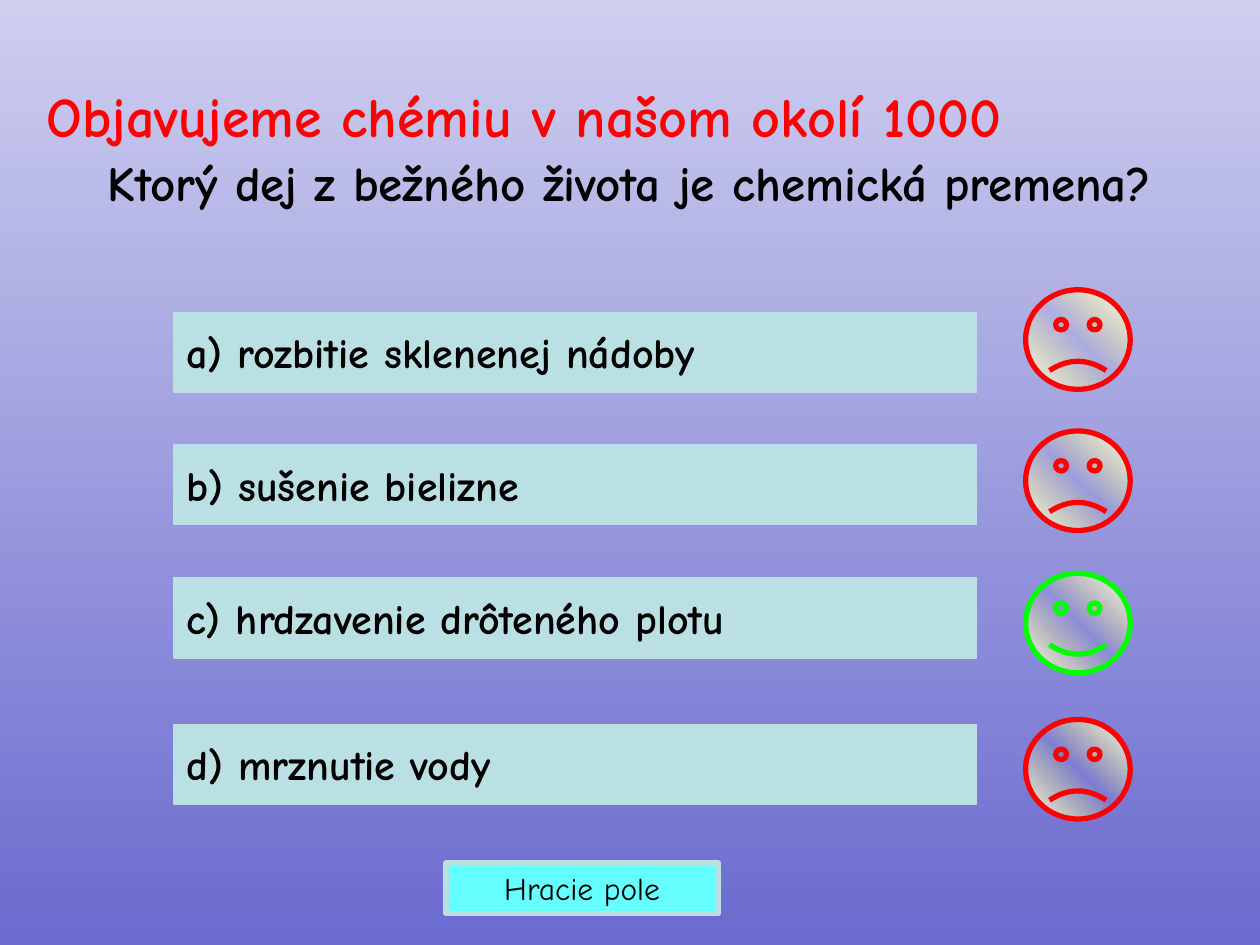
"""Build a quiz slide with four answers and a face beside each."""
from copy import deepcopy
from dataclasses import dataclass

from pptx import Presentation
from pptx.dml.color import RGBColor
from pptx.dml.fill import FillFormat
from pptx.enum.shapes import MSO_SHAPE
from pptx.enum.text import MSO_ANCHOR, PP_ALIGN
from pptx.oxml.ns import qn
from pptx.oxml.xmlchemy import OxmlElement
from pptx.shapes.autoshape import Shape
from pptx.slide import Slide
from pptx.text.text import TextFrame, _Paragraph
from pptx.util import Inches, Length, Pt

COLUMNS, ROWS = 100, 75
WIDTH, HEIGHT = Inches(10), Inches(7.5)
FONT = "Comic Neue"
RED, GREEN, BLACK = "FF0000", "00FF00", "000000"
PALE, CYAN = "BBE0E3", "66FFFF"


@dataclass(frozen=True)
class Area:
    """A rectangle in grid columns and rows."""

    column: float
    row: float
    columns: float
    rows: float

    def lengths(self) -> tuple[Length, ...]:
        """Return left, top, width and height on the slide."""
        across, down = WIDTH / COLUMNS, HEIGHT / ROWS
        return (Length(self.column * across), Length(self.row * down),
                Length(self.columns * across), Length(self.rows * down))


@dataclass(frozen=True)
class Answer:
    """One answer with the rows of its bar and face."""

    wording: str
    bar_row: float
    face_row: float
    correct: bool = False


ANSWERS = (
    Answer("a) rozbitie sklenenej nádoby", 24.8, 23),
    Answer("b) sušenie bielizne", 35.3, 34.2),
    Answer("c) hrdzavenie drôteného plotu", 45.9, 45.5, True),
    Answer("d) mrznutie vody", 57.5, 57.1),
)


def color(value: str) -> RGBColor:
    """Turn a hex string into a colour."""
    return RGBColor.from_string(value)


def apply(target: object, formats: dict[str, object]) -> None:
    """Set each attribute of the target."""
    for name, value in formats.items():
        setattr(target, name, value)


def write(paragraph: _Paragraph, wording: str, size: float, ink: str,
          bold: bool, **formats: object) -> None:
    """Fill a paragraph with one formatted run."""
    apply(paragraph, formats)
    run = paragraph.add_run()
    run.text = wording
    apply(run.font, {"name": FONT, "size": Pt(size), "bold": bold})
    run.font.color.rgb = color(ink)


def blend(fill: FillFormat, start: str, end: str, angle: float) -> None:
    """Make a linear gradient of two colours."""
    fill.gradient()
    fill.gradient_angle = angle
    for stop, value in zip(fill.gradient_stops, (start, end)):
        stop.color.rgb = color(value)


def add_clear_middle(face: Shape, tint: str) -> None:
    """Insert a fully transparent stop halfway along the gradient."""
    stops = face._element.spPr.find(qn("a:gradFill")).find(qn("a:gsLst"))
    middle = deepcopy(stops[0])
    stops.insert(1, middle)
    middle.set("pos", "50000")
    middle[0].set("val", tint)
    alpha = OxmlElement("a:alpha")
    alpha.set("val", "0")
    middle[0].append(alpha)


def draw_shape(slide: Slide, preset: MSO_SHAPE, area: Area, outline: str,
               weight: float) -> Shape:
    """Add an outlined preset shape without a shadow."""
    shape = slide.shapes.add_shape(preset, *area.lengths())
    shape.shadow.inherit = False
    shape.line.color.rgb = color(outline)
    shape.line.width = Pt(weight)
    return shape


def draw_button(slide: Slide, area: Area, wording: str, fill: str, weight: float,
                size: float, bold: bool, alignment: PP_ALIGN) -> None:
    """Add a labelled button."""
    button = draw_shape(slide, MSO_SHAPE.ACTION_BUTTON_CUSTOM, area, PALE, weight)
    button.fill.solid()
    button.fill.fore_color.rgb = color(fill)
    apply(button.text_frame, {"word_wrap": False,
                              "vertical_anchor": MSO_ANCHOR.MIDDLE})
    write(button.text_frame.paragraphs[0], wording, size, BLACK, bold,
          alignment=alignment)


def draw_face(slide: Slide, row: float, happy: bool) -> None:
    """Add a smiling green or frowning red face."""
    face = draw_shape(slide, MSO_SHAPE.SMILEY_FACE, Area(81.4, row, 8.3, 7.9),
                      GREEN if happy else RED, 3)
    face.adjustments[0] = 0.047 if happy else -0.047
    blend(face.fill, "FFFFFF", "FFFFFF", 45)
    add_clear_middle(face, "FFFF66")


def hang(frame: TextFrame, indent: Length) -> None:
    """Give every paragraph a hanging indent."""
    for paragraph in frame.paragraphs:
        properties = paragraph._p.get_or_add_pPr()
        properties.set("marL", str(indent))
        properties.set("indent", str(-indent))


def draw_question(slide: Slide) -> None:
    """Add the topic and the question."""
    frame = slide.shapes.add_textbox(*Area(2.7, 6, 94.5, 7.9).lengths()).text_frame
    frame.word_wrap = True
    write(frame.paragraphs[0], "Objavujeme chémiu v našom okolí 1000", 32, RED,
          True, space_before=Pt(6.4))
    write(frame.add_paragraph(), "Ktorý dej z bežného života je chemická premena?",
          28, BLACK, True, alignment=PP_ALIGN.CENTER, line_spacing=0.9,
          space_before=Pt(5.6))
    hang(frame, Inches(0.38))


def main() -> None:
    """Build and save the slide."""
    deck = Presentation()
    apply(deck, {"slide_width": WIDTH, "slide_height": HEIGHT})
    slide = deck.slides.add_slide(deck.slide_layouts[6])
    blend(slide.background.fill, "CECEEF", "6B6BCF", 270)
    draw_question(slide)
    draw_button(slide, Area(35.4, 68.5, 21.6, 4), "Hracie pole", CYAN, 3, 18,
                False, PP_ALIGN.CENTER)
    for answer in ANSWERS:
        draw_button(slide, Area(13.8, answer.bar_row, 63.7, 6.3), answer.wording,
                    PALE, 1, 24, True, PP_ALIGN.LEFT)
        draw_face(slide, answer.face_row, answer.correct)
    deck.save("out.pptx")


if __name__ == "__main__":
    main()
